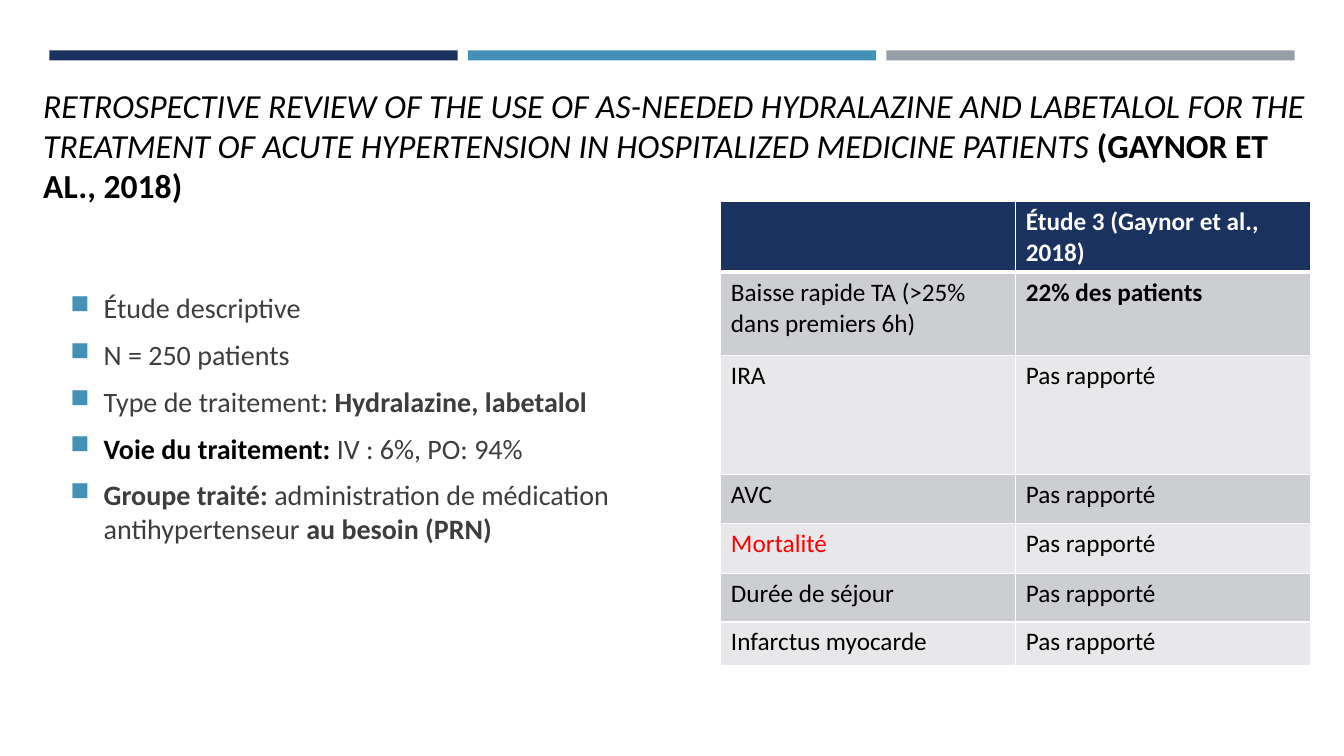
import pptx
import pptx.util
import pptx.dml.color
import pptx.enum.shapes
import pptx.enum.text
import pptx.oxml
import pptx.oxml.ns
from dataclasses import dataclass

Inches = pptx.util.Inches
Pt = pptx.util.Pt
Anchor = pptx.enum.text.MSO_ANCHOR


@dataclass(frozen=True)
class Theme:
    font: str = "Calibri"
    navy: str = "1A3260"
    blue: str = "4590B8"
    gray: str = "969FA7"
    black: str = "000000"
    white: str = "FFFFFF"
    body: str = "3D3D3D"
    alert: str = "FF0000"
    bands: tuple = ("CDCED2", "E8E8EA")
    title_size: int = 24
    body_size: int = 20
    table_size: int = 18


def color(code):
    return pptx.dml.color.RGBColor.from_string(code)


def apply(target, values):
    for name, value in values.items():
        setattr(target, name, value)


def element(xml):
    namespaces = pptx.oxml.ns.nsdecls("a")
    return pptx.oxml.parse_xml(xml.replace(" ", f" {namespaces} ", 1))


class SlideBuilder:
    def __init__(self, slide, theme):
        self.slide = slide
        self.theme = theme

    def bar(self, left, top, width, height, fill):
        shape = self.slide.shapes.add_shape(
            pptx.enum.shapes.MSO_SHAPE.RECTANGLE, *map(Inches, (left, top, width, height)))
        shape.shadow.inherit = False
        shape.fill.solid()
        shape.fill.fore_color.rgb = color(fill)
        shape.line.fill.background()

    def runs(self, paragraph, parts, size):
        for words, code, style in parts:
            run = paragraph.add_run()
            run.text = words
            apply(run.font, {"name": self.theme.font, "size": Pt(size),
                             "bold": "b" in style, "italic": "i" in style})
            run.font.color.rgb = color(code)

    def bullet(self, paragraph):
        properties = paragraph._p.get_or_add_pPr()
        indent = Inches(0.33)
        properties.set("marL", str(indent))
        properties.set("indent", str(-indent))
        for xml in (f'<a:buClr ><a:srgbClr val="{self.theme.blue}"/></a:buClr>',
                    '<a:buSzPct val="92000"/>', '<a:buChar char="■"/>'):
            properties.append(element(xml))

    def text(self, left, top, width, height, paragraphs, size, frame_format,
             paragraph_format=None, bulleted=False):
        box = self.slide.shapes.add_textbox(*map(Inches, (left, top, width, height)))
        frame = box.text_frame
        apply(frame, {"word_wrap": True, **frame_format})
        for index, parts in enumerate(paragraphs):
            paragraph = frame.add_paragraph() if index else frame.paragraphs[0]
            apply(paragraph, paragraph_format or {})
            if bulleted:
                self.bullet(paragraph)
            self.runs(paragraph, parts, size)

    def borders(self, cell, widths):
        properties = cell._tc.get_or_add_tcPr()
        for side, width in widths.items():
            properties.append(element(
                f'<a:ln{side} w="{Pt(width)}"><a:solidFill>'
                f'<a:srgbClr val="{self.theme.white}"/></a:solidFill></a:ln{side}>'))

    def table(self, left, top, width, row_heights, rows):
        columns = len(rows[0])
        table = self.slide.shapes.add_table(
            len(rows), columns,
            *map(Inches, (left, top, width, sum(row_heights)))).table
        for column in table.columns:
            column.width = Inches(width / columns)
        for r, (height, row) in enumerate(zip(row_heights, rows)):
            table.rows[r].height = Inches(height)
            for c, part in enumerate(row):
                cell = table.cell(r, c)
                self.borders(cell, {"L": 1, "R": 1, "T": 3 if r == 1 else 1,
                                    "B": 3 if r == 0 else 1})
                cell.fill.solid()
                fill = self.theme.bands[(r - 1) % 2] if r else self.theme.navy
                cell.fill.fore_color.rgb = color(fill)
                if part[0]:
                    self.runs(cell.text_frame.paragraphs[0], [part], self.theme.table_size)


theme = Theme()
presentation = pptx.Presentation()
apply(presentation, {"slide_width": Inches(13.33), "slide_height": Inches(7.5)})
builder = SlideBuilder(presentation.slides.add_slide(presentation.slide_layouts[6]), theme)

for position, fill in enumerate((theme.navy, theme.blue, theme.gray)):
    builder.bar(0.49 + 4.15 * position, 0.5, 4.05, 0.1, fill)

study_title = [[
    ("RETROSPECTIVE REVIEW OF THE USE OF AS-NEEDED HYDRALAZINE AND LABETALOL FOR THE "
     "TREATMENT OF ACUTE HYPERTENSION IN HOSPITALIZED MEDICINE PATIENTS ", theme.black, "i"),
    ("(GAYNOR ET AL., 2018)", theme.black, "b"),
]]
builder.text(0.33, 0.79, 12.82, 1.33, study_title, theme.title_size,
             {"vertical_anchor": Anchor.TOP})

study_features = [
    [("Étude descriptive", theme.body, "")],
    [("N = 250 patients", theme.body, "")],
    [("Type de traitement: ", theme.body, ""), ("Hydralazine, labetalol", theme.body, "b")],
    [("Voie du traitement: ", theme.black, "b"), ("IV : 6%, PO: 94%", theme.body, "")],
    [("Groupe traité: ", theme.body, "b"),
     ("administration de médication antihypertenseur ", theme.body, ""),
     ("au besoin (PRN)", theme.body, "b")],
]
builder.text(0.6, 2, 5.75, 4.76, study_features, theme.body_size,
             {"vertical_anchor": Anchor.MIDDLE, "margin_bottom": Inches(0.52)},
             {"space_before": Pt(3.5), "space_after": Pt(6)}, bulleted=True)

unreported = ("Pas rapporté", theme.black, "")
outcomes = [
    [("", theme.white, ""), ("Étude 3 (Gaynor et al., 2018)", theme.white, "b")],
    [("Baisse rapide TA (>25% dans premiers 6h)", theme.black, ""),
     ("22% des patients", theme.black, "b")],
]
for outcome in ("IRA", "AVC", "Mortalité", "Durée de séjour", "Infarctus myocarde"):
    code = theme.alert if outcome == "Mortalité" else theme.black
    outcomes.append([(outcome, code, ""), unreported])
builder.table(7.15, 2, 5.85, (0.7, 0.83, 1.18, 0.48, 0.5, 0.48, 0.43), outcomes)

presentation.save("out.pptx")
